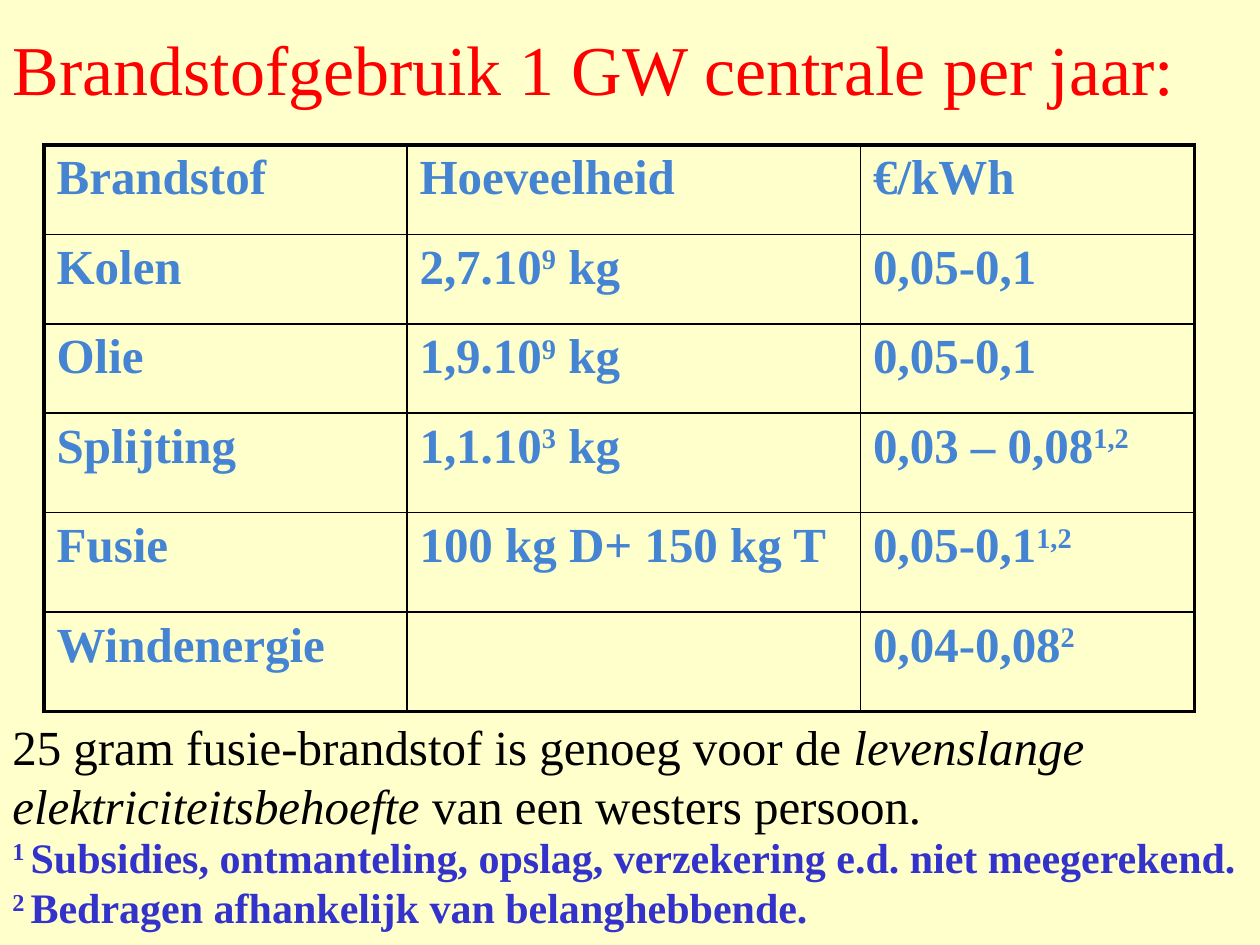
from lxml import etree
from pptx import Presentation
from pptx.dml.color import RGBColor
from pptx.enum import text
from pptx.oxml import ns
from pptx.util import Inches, Pt

FONT = "Times New Roman"


def write(paragraph, marked, size, colour, bold=False):
    """Fill a paragraph; ^...^ marks superscript and _..._ marks italics."""
    font = paragraph.font
    font.name, font.size, font.bold = FONT, Pt(size), bold
    font.color.rgb = RGBColor.from_string(colour)
    for i, part in enumerate(marked.split("^")):
        for j, piece in enumerate(part.split("_")):
            if not piece:
                continue
            run = paragraph.add_run()
            run.text = piece
            if i % 2:
                run._r.get_or_add_rPr().set("baseline", "30000")
            if j % 2:
                run.font.italic = True


def add_border(cell, side, width):
    line = etree.SubElement(cell._tc.get_or_add_tcPr(), ns.qn(f"a:ln{side}"), w=str(Pt(width)))
    fill = etree.SubElement(line, ns.qn("a:solidFill"))
    etree.SubElement(fill, ns.qn("a:srgbClr"), val="000000")


prs = Presentation()
prs.slide_width, prs.slide_height = Inches(10), Inches(7.5)
slide = prs.slides.add_slide(prs.slide_layouts[5])
slide.background.fill.solid()
slide.background.fill.fore_color.rgb = RGBColor.from_string("FFFFCC")

title = slide.shapes.title
title.left, title.top, title.width, title.height = 0, 0, Inches(10), Inches(1.07)
title.text_frame.vertical_anchor = text.MSO_ANCHOR.MIDDLE
heading = title.text_frame.paragraphs[0]
heading.alignment = text.PP_ALIGN.LEFT
write(heading, "Brandstofgebruik 1 GW centrale per jaar:", 40, "FF0000")

fuels = [
    ("Brandstof", "Hoeveelheid", "€/kWh"),
    ("Kolen", "2,7.10^9^ kg", "0,05-0,1"),
    ("Olie", "1,9.10^9^ kg", "0,05-0,1"),
    ("Splijting", "1,1.10^3^ kg", "0,03 – 0,08^1,2^"),
    ("Fusie", "100 kg D+ 150 kg T", "0,05-0,1^1,2^"),
    ("Windenergie", "", "0,04-0,08^2^"),
]
column_widths = [2.88, 3.6, 2.65]
row_heights = [0.71] * 3 + [0.79] * 3
last_row, last_col = len(row_heights) - 1, len(column_widths) - 1

table = slide.shapes.add_table(
    len(row_heights), len(column_widths), Inches(0.35), Inches(1.15),
    Inches(sum(column_widths)), Inches(sum(row_heights))).table
table.first_row = table.horz_banding = False
for column, width in zip(table.columns, column_widths):
    column.width = Inches(width)
for row, height in zip(table.rows, row_heights):
    row.height = Inches(height)

for r, fuel in enumerate(fuels):
    for c, entry in enumerate(fuel):
        cell = table.cell(r, c)
        outer = {"L": c == 0, "R": c == last_col, "T": r == 0, "B": r == last_row}
        for side, is_outer in outer.items():
            add_border(cell, side, 2.25 if is_outer else 1)
        cell.fill.background()
        write(cell.text_frame.paragraphs[0], entry, 28, "4584D3", bold=True)

remarks = [
    (5.64, 1.03, 28, "000000", False,
     ["25 gram fusie-brandstof is genoeg voor de _levenslange_",
      "_elektriciteitsbehoefte_ van een westers persoon."]),
    (6.55, 0.9, 24, "3333CC", True,
     ["^1 ^Subsidies, ontmanteling, opslag, verzekering e.d. niet meegerekend.",
      "^2 ^Bedragen afhankelijk van belanghebbende."]),
]
for top, height, size, colour, bold, lines in remarks:
    remark = slide.shapes.add_textbox(0, Inches(top), Inches(10), Inches(height)).text_frame
    remark.word_wrap = True
    for n, line in enumerate(lines):
        paragraph = remark.add_paragraph() if n else remark.paragraphs[0]
        write(paragraph, line, size, colour, bold)

prs.save("out.pptx")
